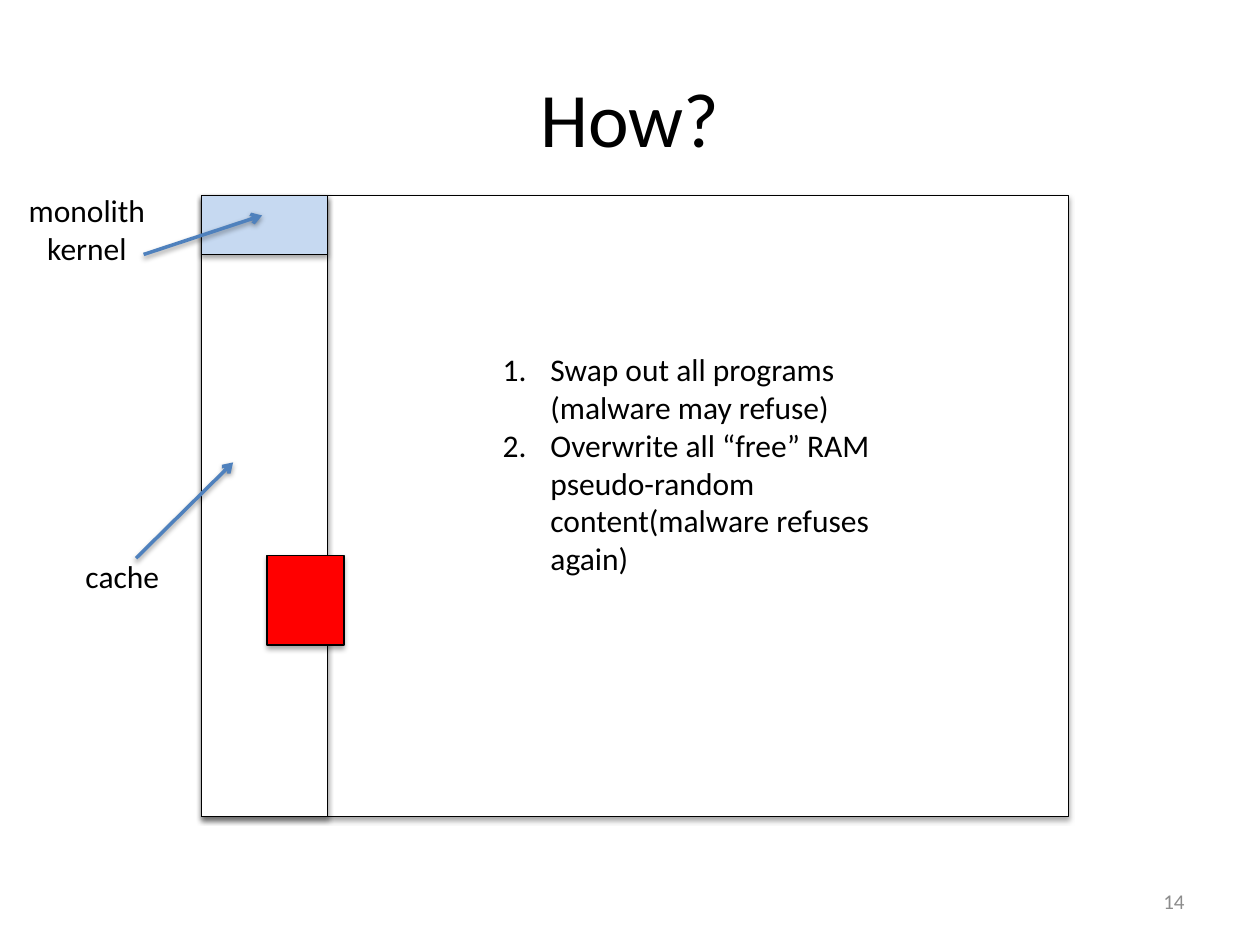
"""Build the "How?" slide: a memory map with labels and two numbered steps."""
from lxml import etree
from pptx import Presentation
from pptx.dml.color import RGBColor
from pptx.enum.shapes import MSO_CONNECTOR, MSO_SHAPE
from pptx.enum.text import MSO_ANCHOR, MSO_AUTO_SIZE, PP_ALIGN
from pptx.oxml.ns import qn
from pptx.util import Inches, Pt

LEFT, CENTER, RIGHT = PP_ALIGN.LEFT, PP_ALIGN.CENTER, PP_ALIGN.RIGHT
TOP, MIDDLE = MSO_ANCHOR.TOP, MSO_ANCHOR.MIDDLE
FIT, FIXED = MSO_AUTO_SIZE.SHAPE_TO_FIT_TEXT, MSO_AUTO_SIZE.NONE
RECT, LINE = MSO_SHAPE.RECTANGLE, MSO_CONNECTOR.STRAIGHT

BLACK = RGBColor(0, 0, 0)
WHITE = RGBColor(0xFF, 0xFF, 0xFF)
PALE = RGBColor(0xC6, 0xD9, 0xF1)
BLUE = RGBColor(0x4F, 0x81, 0xBD)
RED = RGBColor(0xFF, 0, 0)
GREY = RGBColor(0x8C, 0x8C, 0x8C)
FONT = "Calibri"

WIDE, HIGH = 10, 7.5
X, Y, DEPTH = 1.6, 1.55, 4.93
RAM, CACHE, KERNEL = 6.88, 1, 0.47

TITLE = "How?"
NAME = ["monolith", "kernel"]
STEPS = [
    "Swap out all programs (malware may refuse)",
    "Overwrite all “free” RAM pseudo-random content(malware refuses again)",
]
BLOCKS = [
    ((X, Y, RAM, DEPTH), WHITE),
    ((X, Y, CACHE, DEPTH), WHITE),
    ((X, Y, CACHE, KERNEL), PALE),
]
MALWARE = ((2.12, 4.41, 0.61, 0.71), RED)
ARROWS = [(1.14, Y + KERNEL, 2.08, 1.71), (1.08, 4.43, 1.85, 3.67)]


def inches(box):
    return [Inches(n) for n in box]


def shade(shape, dist, alpha):
    props = shape._element.spPr
    glow = etree.SubElement(
        etree.SubElement(props, qn("a:effectLst")), qn("a:outerShdw"),
        blurRad=str(Pt(3.1)), dist=str(Pt(dist)), dir="5400000", rotWithShape="0")
    tint = etree.SubElement(glow, qn("a:srgbClr"), val=str(BLACK))
    etree.SubElement(tint, qn("a:alpha"), val=str(alpha * 1000))


def add_block(slide, box, fill):
    block = slide.shapes.add_shape(RECT, *inches(box))
    block.fill.solid()
    block.fill.fore_color.rgb = fill
    block.line.color.rgb = BLACK
    block.line.width = Pt(0.75)
    shade(block, 1.8, 35)


def add_arrow(slide, ends):
    arrow = slide.shapes.add_connector(LINE, *inches(ends))
    arrow.line.color.rgb = BLUE
    arrow.line.width = Pt(2)
    etree.SubElement(arrow.line._ln, qn("a:tailEnd"), type="arrow")
    shade(arrow, 1.6, 38)


def write(frame, lines, size=18, color=BLACK, align=LEFT):
    for i, line in enumerate(lines):
        para = frame.add_paragraph() if i else frame.paragraphs[0]
        para.alignment = align
        run = para.add_run()
        run.text = line
        run.font.name = FONT
        run.font.size = Pt(size)
        run.font.color.rgb = color


def add_text(slide, box, lines, wrap=True, fit=FIT, anchor=TOP, **style):
    frame = slide.shapes.add_textbox(*inches(box)).text_frame
    frame.word_wrap = wrap
    frame.auto_size = fit
    frame.vertical_anchor = anchor
    write(frame, lines, **style)
    return frame


def number(frame):
    for para in frame.paragraphs:
        props = para._p.get_or_add_pPr()
        props.set("marL", str(Inches(0.38)))
        props.set("indent", str(Inches(-0.38)))
        etree.SubElement(props, qn("a:buFont"), typeface="+mj-lt")
        etree.SubElement(props, qn("a:buAutoNum"), type="arabicPeriod")


def main():
    deck = Presentation()
    deck.slide_width, deck.slide_height = inches((WIDE, HIGH))
    slide = deck.slides.add_slide(deck.slide_layouts[5])

    title = slide.shapes.title
    title.left, title.top, title.width, title.height = inches((0.5, 0.3, 9, 1.25))
    title.text_frame.vertical_anchor = MIDDLE
    write(title.text_frame, [TITLE], size=44, align=CENTER)

    add_text(slide, (0.12, 1.47, 1.14, 0.71), NAME, wrap=False, align=CENTER)
    for box, fill in BLOCKS:
        add_block(slide, box, fill)
    add_text(slide, (0.58, 4.37, 0.79, 0.4), ["cache"])
    for ends in ARROWS:
        add_arrow(slide, ends)
    number(add_text(slide, (3.89, 2.73, 3.28, 1.92), STEPS))
    add_text(slide, (7.17, 6.95, 2.33, 0.4), ["14"], fit=FIXED, anchor=MIDDLE,
             size=12, color=GREY, align=RIGHT)
    add_block(slide, *MALWARE)
    deck.save("out.pptx")


if __name__ == "__main__":
    main()
